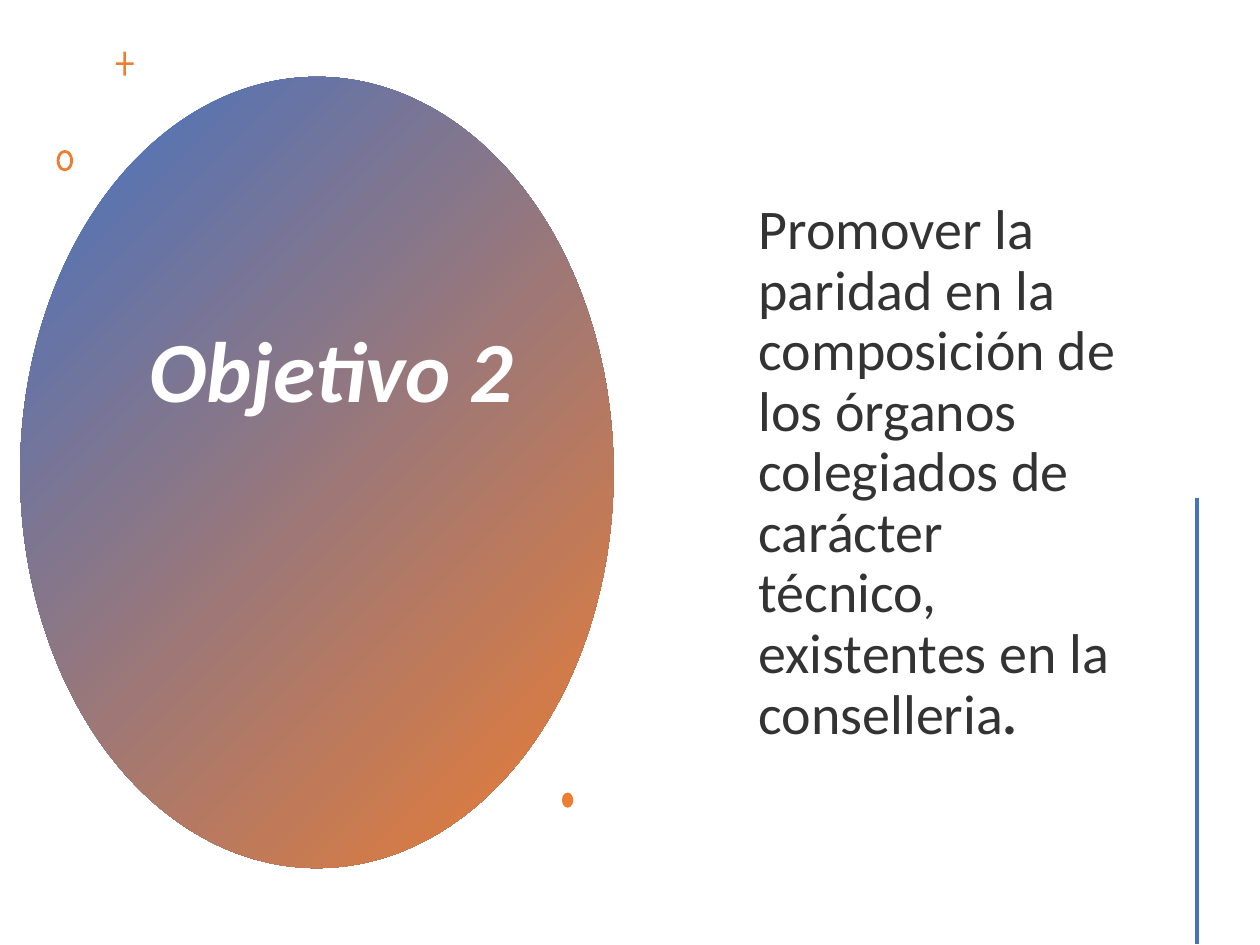
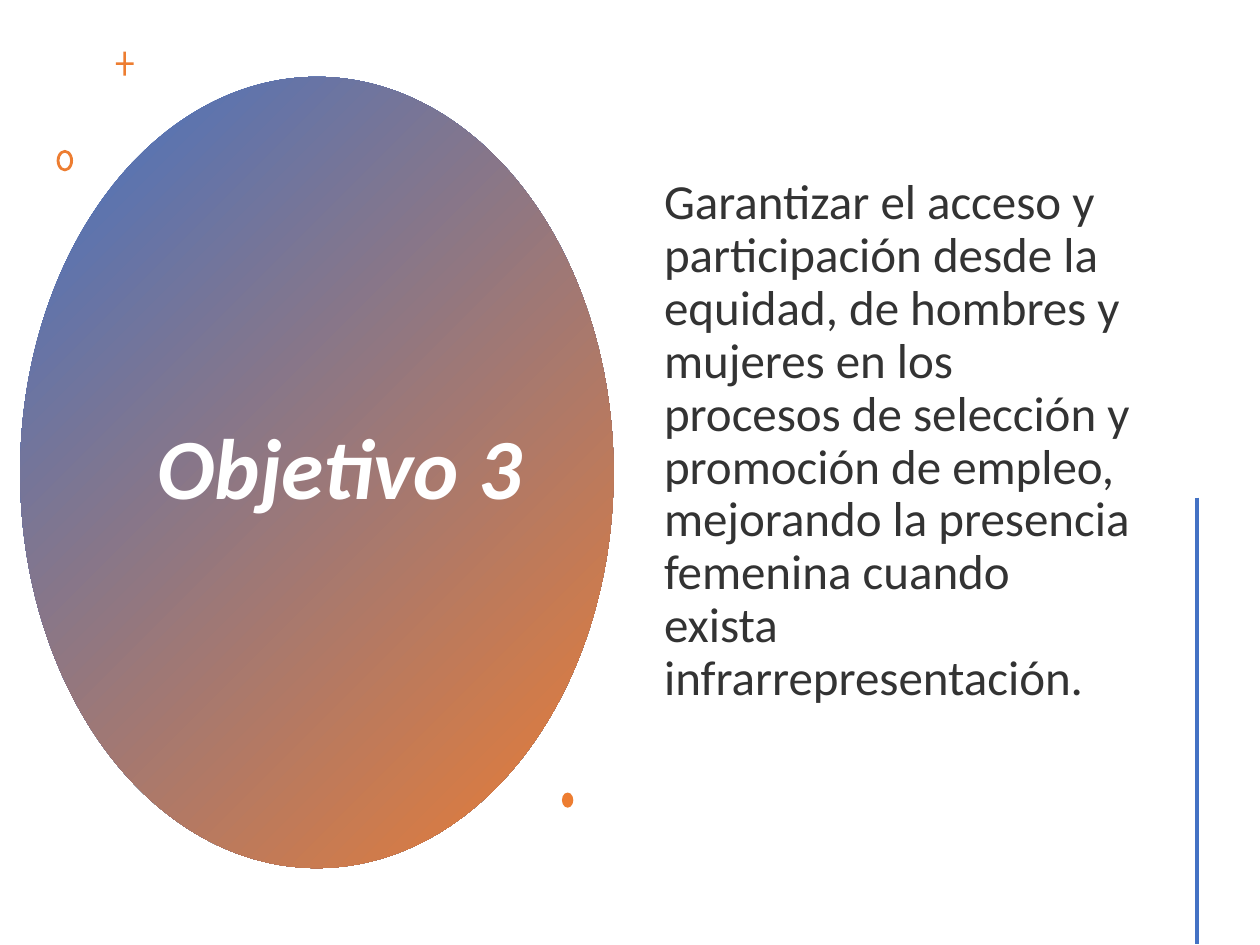
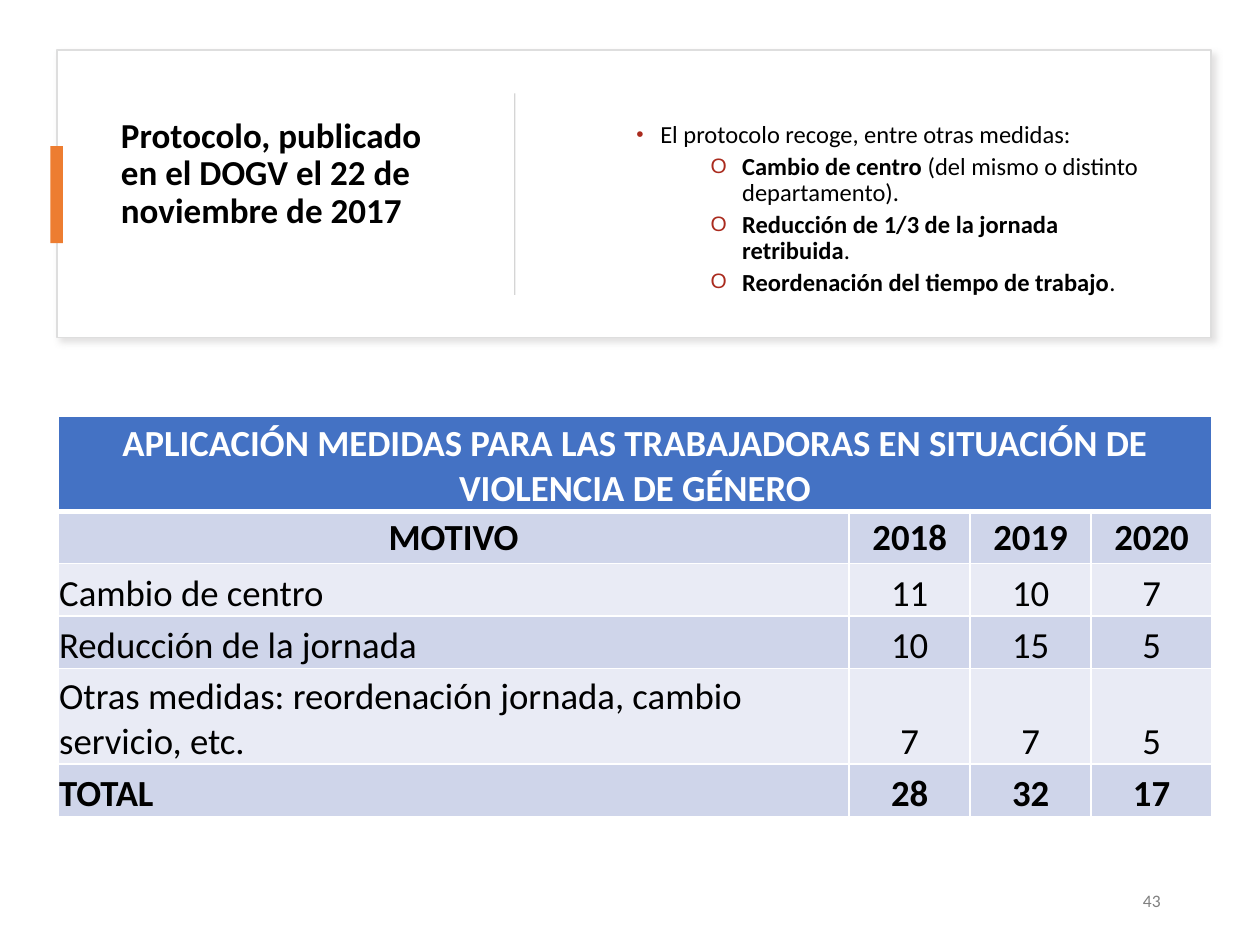
"""Build the equality plan slides: two objectives and the protocol table."""
from dataclasses import dataclass
from typing import Optional, Sequence

from lxml.etree import SubElement
from pptx import Presentation
from pptx.dml.color import RGBColor
from pptx.enum.shapes import MSO_CONNECTOR as Connector, MSO_SHAPE as Preset
from pptx.enum.text import MSO_ANCHOR as Anchor, MSO_AUTO_SIZE as AutoSize, PP_ALIGN as Align
from pptx.oxml.ns import qn
from pptx.util import Emu, Inches, Pt

WIDTH, HEIGHT = Inches(10), Inches(7.5)
FONT = "Calibri"
BLUE, ORANGE, WHITE, BLACK = "4472C4", "ED7D31", "FFFFFF", "000000"
INK, BULLET, NUMBER = "333333", "AA2B1E", "808080"
CARD_LINE, CARD_SHADOW, DIVIDER = "DEDEDE", "C5C3C3", "D5D5D5"
BANDS = ("CFD5EA", "E9EBF5")


def across(share: float) -> Emu:
    """Turn a percentage of the slide width into a length."""
    return Emu(round(WIDTH * share / 100))


def down(share: float) -> Emu:
    """Turn a percentage of the slide height into a length."""
    return Emu(round(HEIGHT * share / 100))


def rgb(code: str) -> RGBColor:
    """Read a hex colour."""
    return RGBColor.from_string(code)


@dataclass(frozen=True)
class Box:
    """A rectangle in percentages of the slide."""
    left: float
    top: float
    width: float
    height: float

    def frame(self) -> tuple:
        """Give left, top, width and height as lengths."""
        return across(self.left), down(self.top), across(self.width), down(self.height)


@dataclass(frozen=True)
class Style:
    """The look of a stretch of text."""
    size: float
    color: str = BLACK
    bold: bool = False
    italic: bool = False


@dataclass(frozen=True)
class Objective:
    """The content of one objective slide."""
    heading: str
    heading_width: float
    heading_lift: float
    aim: str
    aim_size: float
    aim_lift: float
    level: int = 0
    indent: float = 0
    ending: str = ""


@dataclass(frozen=True)
class Measure:
    """One bullet of the protocol: a bold part and a plain part."""
    strong: str
    plain: str
    level: int = 2
    indent: float = 1.4
    hanging: float = 0.25
    mark: str = "O"


ELLIPSE = Box(1.6, 8.13, 47.1, 83.73)
AIM = Box(51.7, 7.6, 39.1, 85.07)
PLUS = Box(9.2, 5.47, 1.4, 2.53)
RING = Box(4.5, 15.87, 1.3, 2.27)
DOT = Box(44.6, 83.87, 0.9, 1.6)
CARD = Box(4.5, 5.33, 91.6, 30.4)
ACCENT = Box(4, 15.47, 1, 10.27)
RULE = Box(40.8, 9.87, 0.1, 21.33)
PROTOCOL = Box(8.6, 8.53, 29.2, 24)
MEASURES = Box(43.9, 8.53, 49.2, 24)
PAGE = Box(70.6, 92.67, 22.5, 5.33)
TABLE = Box(4.6, 44, 91.6, 42.4)
COLUMNS = (62.8, 9.6, 9.6, 9.6)
ROWS = (10.1, 5.55, 5.55, 5.55, 10.1, 5.55)

OBJECTIVES = (
    Objective("Objetivo 2", 32.2, 20.5,
              "Promover la paridad en la composición de los órganos colegiados "
              "de carácter técnico, existentes en la conselleria",
              32, 0, level=1, indent=0.75, ending="."),
    Objective("Objetivo 3", 33.5, 0,
              "Garantizar el acceso y participación desde la equidad, de hombres y "
              "mujeres en los procesos de selección y promoción de empleo, mejorando "
              "la presencia femenina cuando exista infrarrepresentación.",
              28, 6.8),
)
BULLETS = (
    Measure("", "El protocolo recoge, entre otras medidas:", 1, 0.75, 0.19, "•"),
    Measure("Cambio de centro ", "(del mismo o distinto departamento)."),
    Measure("Reducción de 1/3 de la jornada retribuida", "."),
    Measure("Reordenación del tiempo de trabajo", "."),
)
RECORDS = (
    ("APLICACIÓN MEDIDAS PARA LAS TRABAJADORAS EN SITUACIÓN DE VIOLENCIA DE GÉNERO",),
    ("MOTIVO", "2018", "2019", "2020"),
    ("Cambio de centro", "11", "10", "7"),
    ("Reducción de la jornada", "10", "15", "5"),
    ("Otras medidas: reordenación jornada, cambio servicio, etc.", "7", "7", "5"),
    ("TOTAL", "28", "32", "17"),
)


def format_run(run, style: Style) -> None:
    """Apply a style to a run."""
    font = run.font
    font.name, font.size = FONT, Pt(style.size)
    font.bold, font.italic = style.bold, style.italic
    font.color.rgb = rgb(style.color)


def write(paragraph, parts: Sequence[tuple], align=Align.LEFT, spacing: Optional[float] = None) -> None:
    """Fill a paragraph with styled parts."""
    paragraph.text = parts[0][0]
    for words, _ in parts[1:]:
        paragraph.add_run().text = words
    for run, (_, style) in zip(paragraph.runs, parts):
        format_run(run, style)
    paragraph.alignment = align
    if spacing:
        paragraph.line_spacing = spacing


def hang(paragraph, indent: float, hanging: float = 0, mark: str = "") -> None:
    """Set the indent and bullet of a paragraph."""
    props = paragraph._p.get_or_add_pPr()
    props.set("marL", str(Inches(indent)))
    props.set("indent", str(-Inches(hanging)))
    if not mark:
        SubElement(props, qn("a:buNone"))
        return
    SubElement(SubElement(props, qn("a:buClr")), qn("a:srgbClr"), val=BULLET)
    SubElement(props, qn("a:buSzPct"), val="85000")
    SubElement(props, qn("a:buChar"), char=mark)


def place(holder, box: Box, above: float = 0, below: float = 0):
    """Move a text holder and give it extra room above or below its text."""
    holder.left, holder.top, holder.width, holder.height = box.frame()
    frame = holder.text_frame
    frame.word_wrap, frame.auto_size = True, AutoSize.NONE
    frame.vertical_anchor = Anchor.MIDDLE
    frame.margin_top = Inches(0.05) + down(above)
    frame.margin_bottom = Inches(0.05) + down(below)
    return frame


def draw(slide, preset, box: Box, fill: Optional[str] = None):
    """Draw a flat preset shape."""
    shape = slide.shapes.add_shape(preset, *box.frame())
    shape.shadow.inherit = False
    shape.line.fill.background()
    if fill:
        shape.fill.solid()
        shape.fill.fore_color.rgb = rgb(fill)
    return shape


def draw_plus(slide) -> None:
    """Draw the thin plus sign."""
    left, top, width, height = PLUS.frame()
    right, bottom = left + width, top + height
    arm = Inches(0.01)
    x, y = left + width // 2, top + height // 2
    outline = ((x + arm, top), (x + arm, y - arm), (right, y - arm), (right, y + arm),
               (x + arm, y + arm), (x + arm, bottom), (x - arm, bottom), (x - arm, y + arm),
               (left, y + arm), (left, y - arm), (x - arm, y - arm))
    builder = slide.shapes.build_freeform(x - arm, top)
    builder.add_line_segments(outline, close=True)
    plus = builder.convert_to_shape()
    plus.shadow.inherit = False
    plus.fill.solid()
    plus.fill.fore_color.rgb = rgb(ORANGE)
    plus.line.fill.background()


def draw_ornaments(slide) -> None:
    """Draw the gradient ellipse, the small marks and the side line."""
    ellipse = draw(slide, Preset.OVAL, ELLIPSE)
    ellipse.fill.gradient()
    ellipse.fill.gradient_angle = 315
    for stop, color, position in zip(ellipse.fill.gradient_stops, (BLUE, ORANGE), (0, 1)):
        stop.color.rgb, stop.position = rgb(color), position
    slide.shapes.title.element.addprevious(ellipse.element)
    draw_plus(slide)
    ring = draw(slide, Preset.DONUT, RING, ORANGE)
    ring.adjustments[0] = 0.17
    draw(slide, Preset.OVAL, DOT, ORANGE)
    side = slide.shapes.add_connector(
        Connector.STRAIGHT, across(95), down(52.67), across(95), down(99.87))
    side.line.color.rgb, side.line.width = rgb(BLUE), Pt(2)
    SubElement(side.element.spPr, qn("a:effectLst"))


def add_objective(deck, objective: Objective) -> None:
    """Add one objective slide."""
    slide = deck.slides.add_slide(deck.slide_layouts[1])
    draw_ornaments(slide)
    box = Box(10.2, 18.8, objective.heading_width, 62.27)
    heading = place(slide.shapes.title, box, below=objective.heading_lift)
    write(heading.paragraphs[0], [(objective.heading, Style(49, WHITE, True, True))],
          Align.CENTER, 0.9)
    aim = place(slide.placeholders[1], AIM, below=objective.aim_lift).paragraphs[0]
    parts = [(objective.aim, Style(objective.aim_size, INK))]
    if objective.ending:
        parts.append((objective.ending, Style(objective.aim_size, INK, True, True)))
    write(aim, parts, spacing=0.9)
    aim.level = objective.level
    aim.space_before = Pt(0)
    hang(aim, objective.indent)


def draw_card(slide) -> None:
    """Draw the shadowed card with its accent and divider."""
    card = draw(slide, Preset.RECTANGLE, CARD, WHITE)
    card.line.color.rgb, card.line.width = rgb(CARD_LINE), Pt(1)
    effects = card.element.spPr.find(qn("a:effectLst"))
    shadow = SubElement(effects, qn("a:outerShdw"), blurRad=str(Pt(4)), dist=str(Pt(3)),
                        dir="2700000", algn="tl", rotWithShape="0")
    tint = SubElement(shadow, qn("a:srgbClr"), val=CARD_SHADOW)
    SubElement(tint, qn("a:alpha"), val="50000")
    slide.shapes.title.element.addprevious(card.element)
    draw(slide, Preset.RECTANGLE, ACCENT, ORANGE)
    draw(slide, Preset.RECTANGLE, RULE, DIVIDER)


def set_borders(cell, bottom: float) -> None:
    """Give a cell white borders."""
    props = cell._tc.get_or_add_tcPr()
    for side, points in (("L", 1), ("R", 1), ("T", 1), ("B", bottom)):
        line = SubElement(props, qn(f"a:ln{side}"), w=str(Pt(points)))
        SubElement(SubElement(line, qn("a:solidFill")), qn("a:srgbClr"), val=WHITE)


def add_measures_table(slide) -> None:
    """Add the table of measures by year."""
    table = slide.shapes.add_table(len(ROWS), len(COLUMNS), *TABLE.frame()).table
    table.horz_banding = False
    for column, share in zip(table.columns, COLUMNS):
        column.width = across(share)
    for row, share in zip(table.rows, ROWS):
        row.height = down(share)
    table.cell(0, 0).merge(table.cell(0, len(COLUMNS) - 1))
    for r, record in enumerate(RECORDS):
        header = r == 0
        style = Style(21, WHITE if header else BLACK, r in (0, 1, len(RECORDS) - 1))
        for c in range(len(COLUMNS)):
            cell = table.cell(r, c)
            set_borders(cell, 3 if header else 1)
            cell.fill.solid()
            cell.fill.fore_color.rgb = rgb(BLUE if header else BANDS[(r - 1) % 2])
            cell.margin_left = cell.margin_right = cell.margin_top = Inches(0.01)
            cell.margin_bottom = 0
            cell.vertical_anchor = Anchor.MIDDLE if r == 1 else Anchor.BOTTOM
            if c < len(record):
                centred = c > 0 or r < 2
                write(cell.text_frame.paragraphs[0], [(record[c], style)],
                      Align.CENTER if centred else Align.LEFT)


def add_protocol(deck) -> None:
    """Add the protocol slide."""
    slide = deck.slides.add_slide(deck.slide_layouts[1])
    draw_card(slide)
    protocol = place(slide.shapes.title, PROTOCOL, below=4.1)
    write(protocol.paragraphs[0],
          [("Protocolo, publicado en el DOGV el 22 de noviembre de 2017", Style(20, bold=True))],
          spacing=0.9)
    measures = place(slide.placeholders[1], MEASURES, above=3.3)
    for index, bullet in enumerate(BULLETS):
        paragraph = measures.add_paragraph() if index else measures.paragraphs[0]
        parts = [(bullet.strong, Style(14, bold=True)), (bullet.plain, Style(14))]
        write(paragraph, [part for part in parts if part[0]], spacing=0.9)
        paragraph.level = bullet.level
        paragraph.space_before = Pt(2.8)
        hang(paragraph, bullet.indent, bullet.hanging, bullet.mark)
    page = place(slide.shapes.add_textbox(*PAGE.frame()), PAGE)
    write(page.paragraphs[0], [("43", Style(10, NUMBER))], Align.RIGHT)
    add_measures_table(slide)


def main() -> None:
    """Build and save the deck."""
    deck = Presentation()
    deck.slide_width, deck.slide_height = WIDTH, HEIGHT
    for objective in OBJECTIVES:
        add_objective(deck, objective)
    add_protocol(deck)
    deck.save("out.pptx")


if __name__ == "__main__":
    main()
